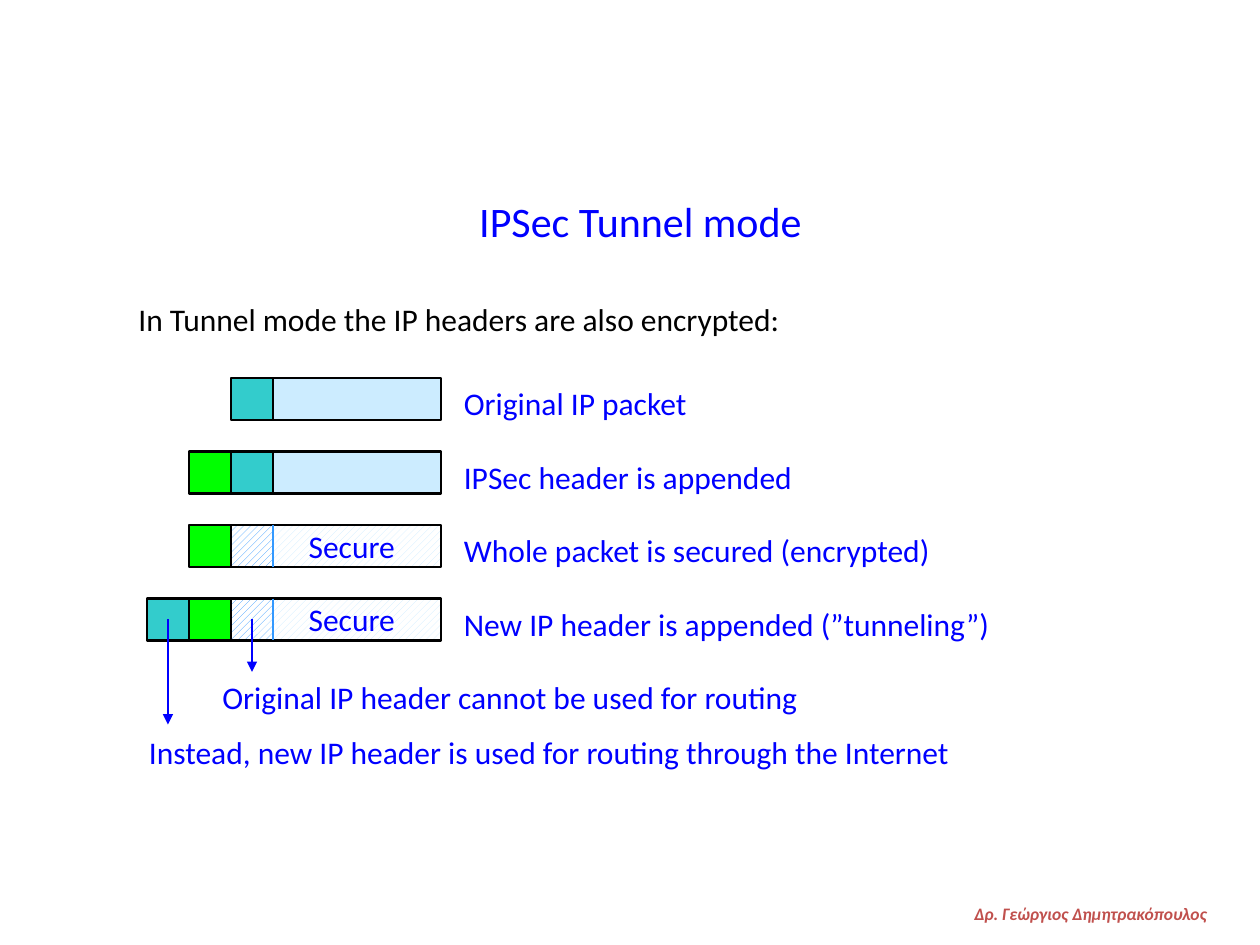
"""Build the IPSec Tunnel mode slide, measured in pixels at 120 to the inch."""
from lxml.etree import SubElement
from pptx import Presentation
from pptx.dml.color import RGBColor
from pptx.enum.dml import MSO_PATTERN
from pptx.enum.shapes import MSO_CONNECTOR, MSO_SHAPE
from pptx.enum.text import PP_ALIGN
from pptx.oxml.ns import qn
from pptx.util import Pt

PX = 7620
CELL = 40
BLUE, TEAL, GREEN, PALE, SKY = "0000FF", "33CCCC", "00FF00", "CCECFF", "3399FF"


def rgb(value):
    return RGBColor.from_string(value)


def add_text(box, text, size=18, color=BLUE, align=PP_ALIGN.LEFT, bold=False):
    tf = s.shapes.add_textbox(*[v * PX for v in box]).text_frame
    tf.word_wrap = True
    p = tf.paragraphs[0]
    p.alignment = align
    r = p.add_run()
    r.text = text
    r.font.name = "Calibri"
    r.font.size = Pt(size)
    r.font.bold = r.font.italic = bold
    r.font.color.rgb = rgb(color)


prs = Presentation()
prs.slide_width, prs.slide_height = 1200 * PX, 900 * PX
s = prs.slides.add_slide(prs.slide_layouts[6])

add_text((200, 180, 820, 60), "IPSec Tunnel mode", 24, align=PP_ALIGN.CENTER)
add_text((120, 280, 980, 52), "In Tunnel mode the IP headers are also encrypted:", color="000000")

packets = [
    ("Original IP packet", 460, [], False),
    ("IPSec header is appended", 670, [GREEN], False),
    ("Whole packet is secured (encrypted)", 620, [GREEN], True),
    ("New IP header is appended (”tunneling”)", 660, [GREEN, TEAL], True),
]
lines = []
for row, (label, width, headers, secure) in enumerate(packets):
    y = 360 + 70 * row
    cells = [(260, 4 * CELL, PALE, secure), (220, CELL, SKY if secure else TEAL, secure)]
    cells += [(180 - CELL * i, CELL, color, False) for i, color in enumerate(headers)]
    for x, w, color, hatched in cells:
        sp = s.shapes.add_shape(MSO_SHAPE.RECTANGLE, x * PX, y * PX, w * PX, CELL * PX)
        sp.shadow.inherit = False
        sp.line.color.rgb = rgb("000000")
        sp.line.width = Pt(1.5)
        if hatched:
            sp.fill.patterned()
            sp.fill.pattern = MSO_PATTERN.WIDE_UPWARD_DIAGONAL
            sp.fill.fore_color.rgb = rgb(color)
            sp.fill.back_color.rgb = rgb("FFFFFF")
        else:
            sp.fill.solid()
            sp.fill.fore_color.rgb = rgb(color)
    add_text((430, y, width, 48), label)
    if secure:
        add_text((270, y - 4, 130, 48), "Secure", align=PP_ALIGN.CENTER)
        lines.append((260, y, y + CELL, SKY, False))

lines += [(160, 590, 690, BLUE, True), (240, 590, 640, BLUE, True)]
for x, top, bottom, color, arrow in lines:
    c = s.shapes.add_connector(MSO_CONNECTOR.STRAIGHT, x * PX, top * PX, x * PX, bottom * PX)
    c.line.color.rgb = rgb(color)
    c.line.width = Pt(1.5)
    if arrow:
        SubElement(c.line._get_or_add_ln(), qn("a:tailEnd"), type="triangle")
    SubElement(c._element.spPr, qn("a:effectLst"))

add_text((200, 640, 720, 48), "Original IP header cannot be used for routing")
add_text((130, 692, 990, 48), "Instead, new IP header is used for routing through the Internet")
add_text((781, 854, 380, 30), "Δρ. Γεώργιος Δημητρακόπουλος", 10, "C0504D", PP_ALIGN.RIGHT, True)

prs.save("out.pptx")
